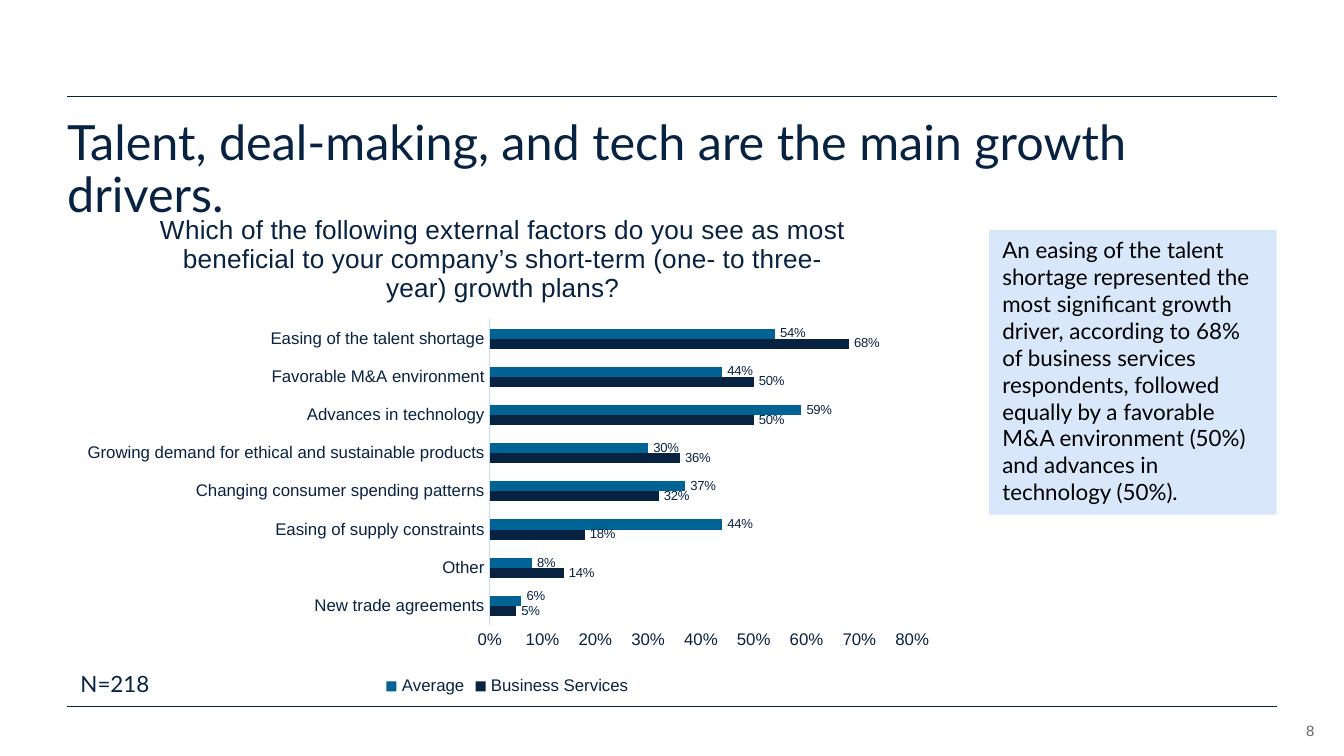
"""Build the survey slide on the main growth drivers."""
import pptx
import pptx.chart.data
import pptx.dml.color
import pptx.enum.chart
import pptx.enum.shapes
import pptx.enum.text
import pptx.oxml
import pptx.oxml.ns
import pptx.util
from pptx.util import Inches

COLORS = {"navy": "082241", "teal": "006393", "pale": "D8E8FA",
          "axis": "C5DCF8", "gray": "666666", "black": "000000"}
QUESTION = ("Which of the following external factors do you see as most beneficial to "
            "your company’s short-term (one- to three-year) growth plans?")
FINDING = ("An easing of the talent shortage represented the most significant growth driver, "
           "according to 68% of business services respondents, followed equally by a favorable "
           "M&A environment (50%) and advances in technology (50%).")
FACTORS = [
    ("New trade agreements", 0.05, 0.06),
    ("Other", 0.14, 0.08),
    ("Easing of supply constraints", 0.18, 0.44),
    ("Changing consumer spending patterns", 0.32, 0.37),
    ("Growing demand for ethical and sustainable products", 0.36, 0.3),
    ("Advances in technology", 0.5, 0.59),
    ("Favorable M&A environment", 0.5, 0.44),
    ("Easing of the talent shortage", 0.68, 0.54),
]


def rgb(name):
    """Return the named colour."""
    return pptx.dml.color.RGBColor.from_string(COLORS[name])


def style(font, size, color="navy", face="Arial"):
    """Set size, colour and typeface of a font."""
    font.size = pptx.util.Pt(size)
    font.name = face
    font.bold = False
    font.color.rgb = rgb(color)


def write(shape, text, size, color="navy", face="Lato", inset=True):
    """Put one wrapped, top-left paragraph into a shape and return it."""
    frame = shape.text_frame
    frame.word_wrap = True
    frame.vertical_anchor = pptx.enum.text.MSO_ANCHOR.TOP
    if not inset:
        frame.margin_left = frame.margin_right = 0
        frame.margin_top = frame.margin_bottom = 0
    paragraph = frame.paragraphs[0]
    paragraph.text = text
    paragraph.alignment = pptx.enum.text.PP_ALIGN.LEFT
    style(paragraph.font, size, color, face)
    return paragraph


def add_text(slide, box, text, size, **options):
    """Add a text box and return its paragraph."""
    shape = slide.shapes.add_textbox(*map(Inches, box))
    return write(shape, text, size, **options)


def add_rule(slide, y):
    """Add a thin horizontal line across the content width."""
    rule = slide.shapes.add_connector(
        pptx.enum.shapes.MSO_CONNECTOR.STRAIGHT, Inches(0.5), Inches(y), Inches(9.5), Inches(y))
    rule.line.color.rgb = rgb("navy")
    rule.line.width = pptx.util.Pt(0.5)
    properties = rule._element.spPr
    properties.append(properties.makeelement(pptx.oxml.ns.qn("a:effectLst"), {}))


def add_callout(slide, box, text):
    """Add the shaded finding panel."""
    panel = slide.shapes.add_shape(
        pptx.enum.shapes.MSO_SHAPE.RECTANGLE, *map(Inches, box))
    panel.shadow.inherit = False
    panel.fill.solid()
    panel.fill.fore_color.rgb = rgb("pale")
    panel.line.fill.background()
    write(panel, text, 12, color="black")


def layout_xml(target="", **places):
    """Return a manual chart layout element."""
    inner = f'<c:layoutTarget val="{target}"/>' if target else ""
    inner += "".join(f'<c:{key} val="{value}"/>' for key, value in places.items())
    return pptx.oxml.parse_xml(
        f'<c:layout {pptx.oxml.ns.nsdecls("c")}><c:manualLayout>{inner}'
        "</c:manualLayout></c:layout>")


def set_layout(parent, position, layout):
    """Replace the layout of a chart element."""
    for old in parent.findall(pptx.oxml.ns.qn("c:layout")):
        parent.remove(old)
    parent.insert(position, layout)


def style_axes(chart):
    """Format both axes and the plot area."""
    none = pptx.enum.chart.XL_TICK_MARK.NONE
    for axis in (chart.category_axis, chart.value_axis):
        axis.major_tick_mark = axis.minor_tick_mark = none
        axis.has_major_gridlines = False
        style(axis.tick_labels.font, 9)
    chart.category_axis.format.line.color.rgb = rgb("axis")
    chart.category_axis.format.line.width = pptx.util.Pt(0.75)
    scale = chart.value_axis
    scale.format.line.fill.background()
    scale.minimum_scale, scale.maximum_scale, scale.major_unit = 0, 0.8, 0.1
    scale.tick_labels.number_format = "0%"
    scale.tick_labels.number_format_is_linked = False
    plot_area = chart._chartSpace.chart.plotArea
    set_layout(plot_area, 0, layout_xml(
        "inner", xMode="edge", yMode="edge", x=0.48, y=0.25, w=0.48, h=0.6))


def style_series(series, color):
    """Colour a series and label its bars."""
    series.format.fill.solid()
    series.format.fill.fore_color.rgb = rgb(color)
    series.invert_if_negative = False
    labels = series.data_labels
    labels.show_value = True
    labels.position = pptx.enum.chart.XL_LABEL_POSITION.OUTSIDE_END
    labels.number_format = "0%"
    labels.number_format_is_linked = False
    style(labels.font, 7)


def raise_first_label(series):
    """Lift the label of the lowest bar clear of its neighbour."""
    label = series.points[0].data_label
    style(label.font, 7)
    label.position = pptx.enum.chart.XL_LABEL_POSITION.OUTSIDE_END
    entry = series.data_labels._element.find(pptx.oxml.ns.qn("c:dLbl"))
    set_layout(entry, 1, layout_xml(x=0, y=-0.01))


def add_factor_chart(slide, box):
    """Add the clustered bar chart of growth factors."""
    names, services, average = zip(*FACTORS)
    data = pptx.chart.data.CategoryChartData(number_format="0%")
    data.categories = names
    data.add_series("Business Services", services)
    data.add_series("Average", average)
    chart = slide.shapes.add_chart(
        pptx.enum.chart.XL_CHART_TYPE.BAR_CLUSTERED, *map(Inches, box), data).chart
    style(chart.font, 10)
    chart.has_title = True
    question = chart.chart_title.text_frame.paragraphs[0]
    question.text = QUESTION
    style(question.font, 14)
    style(question.runs[0].font, 14)
    set_layout(chart.chart_title._element, 1, layout_xml(
        xMode="edge", yMode="edge", x=0.1, y=0.03))
    chart.has_legend = True
    chart.legend.position = pptx.enum.chart.XL_LEGEND_POSITION.BOTTOM
    chart.legend.include_in_layout = False
    style(chart.legend.font, 9)
    style_axes(chart)
    bars = chart.plots[0]
    bars.gap_width = 182
    bars.overlap = 0
    bars.vary_by_categories = False
    for series, color in zip(bars.series, ("navy", "teal")):
        style_series(series, color)
    raise_first_label(bars.series[1])


def main():
    """Build and save the slide."""
    deck = pptx.Presentation()
    deck.slide_width = Inches(10)
    deck.slide_height = deck.slide_width * 9 // 16
    slide = deck.slides.add_slide(deck.slide_layouts[6])
    for y in (0.72, 5.26):
        add_rule(slide, y)
    page = add_text(slide, (9.31, 5.37, 0.47, 0.13), "8", 8,
                    color="gray", face="Arial", inset=False)
    page.alignment = pptx.enum.text.PP_ALIGN.RIGHT
    headline = add_text(slide, (0.5, 0.88, 9, 0.55),
                        "Talent, deal-making, and tech are the main growth drivers.",
                        26, inset=False)
    headline.line_spacing = 0.9
    add_callout(slide, (7.36, 1.71, 2.14, 2.12), FINDING)
    add_factor_chart(slide, (0.5, 1.43, 6.55, 3.79))
    add_text(slide, (0.5, 4.94, 1.35, 0.3), "N=218", 12)
    deck.save("out.pptx")


if __name__ == "__main__":
    main()
